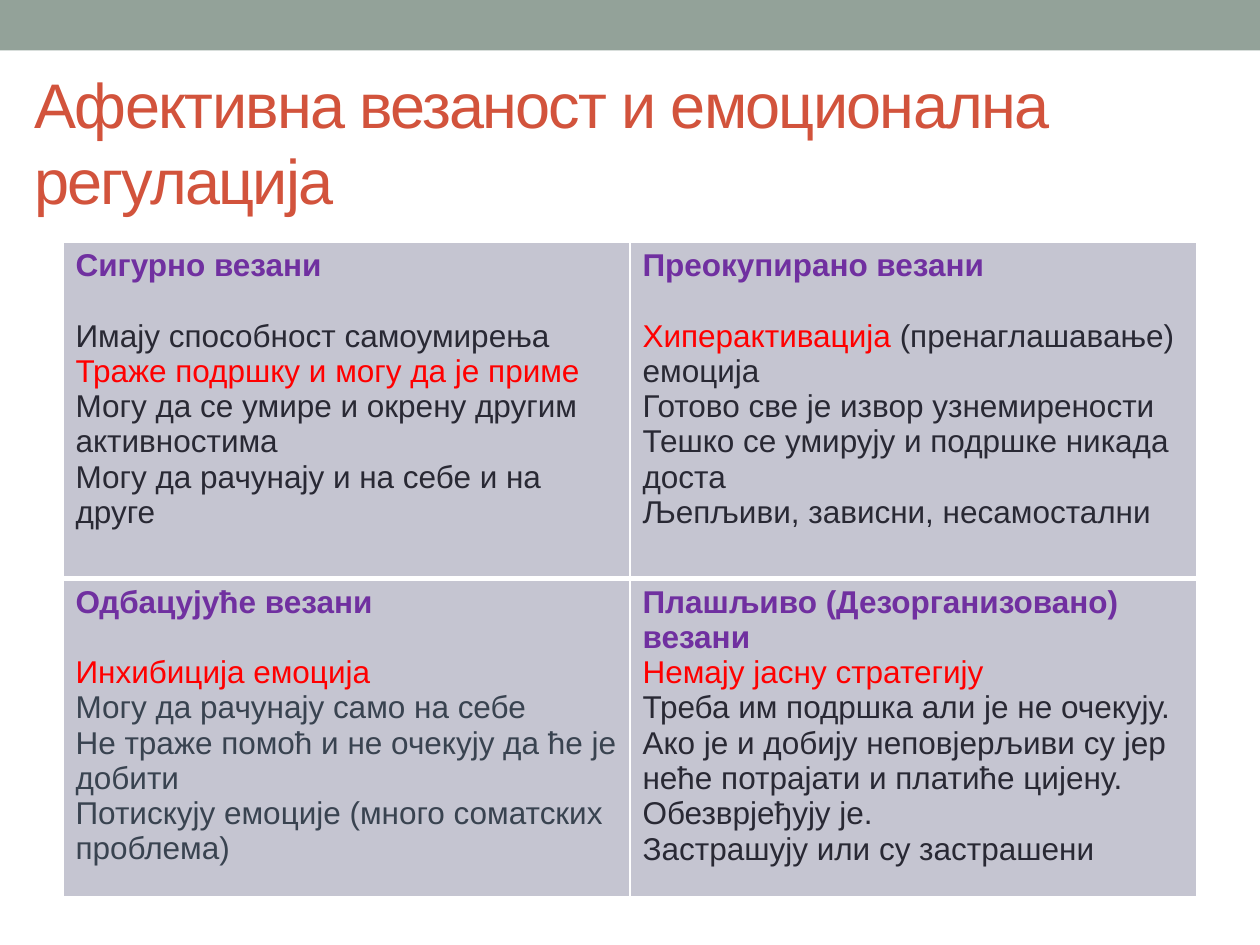
from lxml.etree import SubElement as Sub
from pptx import Presentation
from pptx.dml.color import RGBColor as RGB
from pptx.enum.shapes import MSO_SHAPE as Shape
from pptx.enum.text import MSO_ANCHOR as Anchor, MSO_AUTO_SIZE as Fit, PP_ALIGN as Align
from pptx.oxml.ns import qn
from pptx.util import Inches, Pt

HEX = {"bar": "93A299", "title": "D2533C", "head": "7030A0", "key": "FF0000",
       "dark": "292934", "slate": "394350", "cell": "C5C5D1", "line": "FFFFFF"}
TITLE = "Афективна везаност и емоционална регулација"

# Each cell: heading, gap below it in points, then paragraphs of (text, colour) runs
CELLS = [
    [("Сигурно везани", 20, [
        [("Имају способност самоумирења", "dark")],
        [("Траже подршку и могу да је приме", "key")],
        [("Могу да се умире и окрену другим активностима", "dark")],
        [("Могу да рачунају и на себе и на друге", "dark")]]),
     ("Преокупирано везани", 20, [
         [("Хиперактивација", "key"), (" (пренаглашавање) емоција", "dark")],
         [("Готово све је извор узнемирености", "dark")],
         [("Тешко се умирују и подршке никада доста", "dark")],
         [("Љепљиви, зависни, несамостални", "dark")]])],
    [("Одбацујуће везани", 20, [
        [("Инхибиција емоција", "key")],
        [("Могу да рачунају само на себе", "slate")],
        [("Не траже помоћ и не очекују да ће је добити", "slate")],
        [("Потискују емоције (много соматских проблема)", "slate")]]),
     ("Плашљиво (Дезорганизовано) везани", 0, [
         [("Немају јасну стратегију", "key")],
         [("Треба им подршка али је не очекују. Ако је и добију неповјерљиви су јер "
           "неће потрајати и платиће цијену. Обезврјеђују је.", "dark")],
         [("Застрашују или су застрашени", "dark")]])],
]
ROWS = [2.67, 2.53]
COL = 4.5


def paint(fill, name):
    fill.solid()
    fill.fore_color.rgb = RGB.from_string(HEX[name])


def write(para, text, color="dark", size=18, bold=False, space=None):
    """Add a run; space is the letter spacing in points."""
    run = para.add_run()
    run.text = text
    font = run.font
    font.name, font.size, font.bold = "Arial", Pt(size), bold
    font.color.rgb = RGB.from_string(HEX[color])
    if space is not None:
        font._element.set("spc", str(int(space * 100)))


def edge(cell, **sides):
    """Draw cell borders; each side is given its width in points."""
    props = cell._tc.get_or_add_tcPr()
    for side, width in sides.items():
        line = Sub(props, qn(f"a:ln{side}"), w=str(Pt(width)))
        Sub(Sub(line, qn("a:solidFill")), qn("a:srgbClr"), val=HEX["line"])


def fill_cell(cell, head, gap, body, base):
    edge(cell, L=1, R=1, T=base["T"], B=base["B"])
    paint(cell.fill, "cell")
    para = cell.text_frame.paragraphs[0]
    para.space_after = Pt(gap)
    write(para, head, color="head", bold=True)
    for runs in body:
        para = cell.text_frame.add_paragraph()
        for text, color in runs:
            write(para, text, color=color)


def main():
    deck = Presentation()
    deck.slide_width, deck.slide_height = Inches(10), Inches(7.5)
    slide = deck.slides.add_slide(deck.slide_layouts[5])

    bar = slide.shapes.add_shape(Shape.RECTANGLE, 0, 0, Inches(10), Inches(0.4))
    bar.shadow.inherit = False
    paint(bar.fill, "bar")
    bar.line.fill.background()

    title = slide.shapes.title
    title.left, title.top = Inches(0.17), Inches(0.58)
    title.width, title.height = Inches(9.67), Inches(1.08)
    frame = title.text_frame
    frame.auto_size, frame.word_wrap = Fit.NONE, True
    frame.vertical_anchor = Anchor.MIDDLE
    para = frame.paragraphs[0]
    para.alignment = Align.LEFT
    write(para, TITLE, color="title", size=36, space=-1)

    grid = slide.shapes.add_table(2, 2, Inches(0.5), Inches(1.92),
                                  Inches(2 * COL), Inches(sum(ROWS))).table
    for col in grid.columns:
        col.width = Inches(COL)
    bases = [{"T": 1, "B": 3}, {"T": 3, "B": 1}]
    for r, (high, row, base) in enumerate(zip(ROWS, CELLS, bases)):
        grid.rows[r].height = Inches(high)
        for c, (head, gap, body) in enumerate(row):
            fill_cell(grid.cell(r, c), head, gap, body, base)

    deck.save("out.pptx")


if __name__ == "__main__":
    main()
